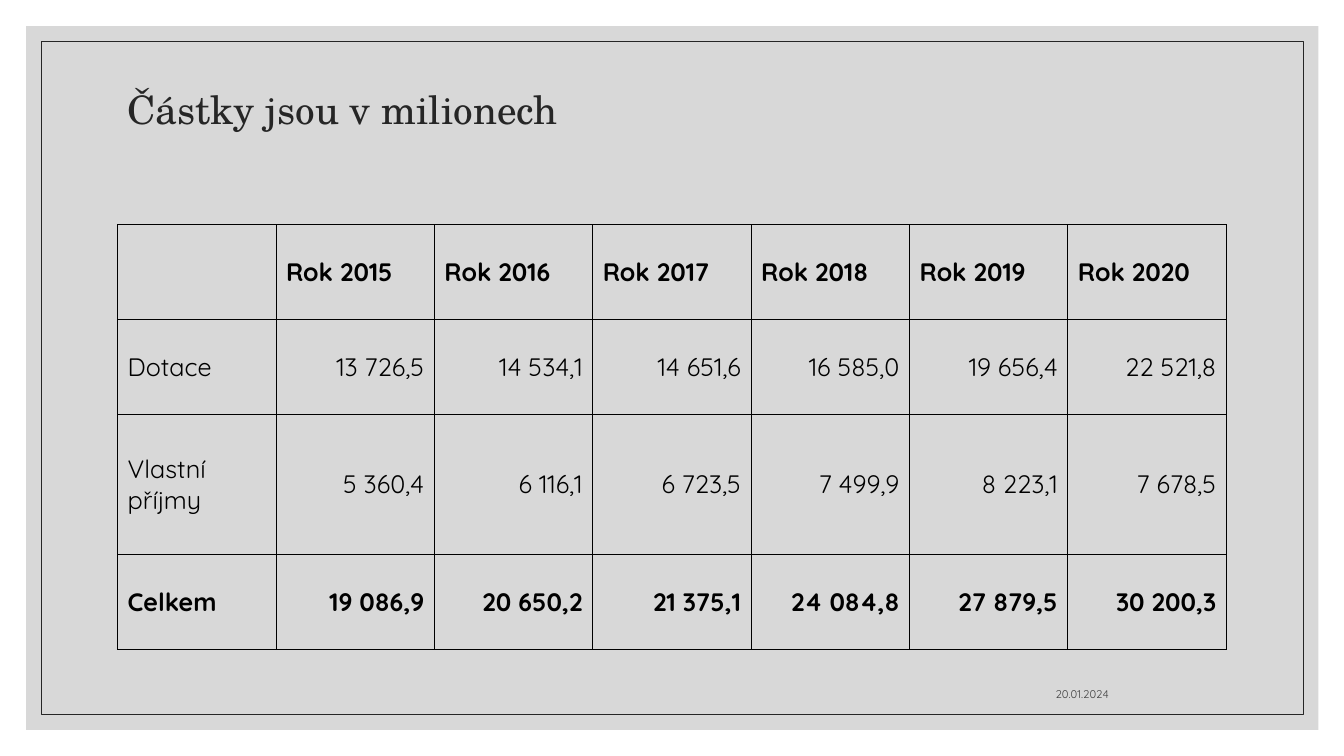
import pptx
import pptx.dml.color
import pptx.enum.shapes
import pptx.enum.text
import pptx.oxml
import pptx.oxml.ns
import pptx.util

Pt = pptx.util.Pt
RGBColor = pptx.dml.color.RGBColor
Align = pptx.enum.text.PP_ALIGN
Anchor = pptx.enum.text.MSO_ANCHOR

PANEL_GREY = RGBColor(0xBF, 0xBF, 0xBF)
DARK = RGBColor(0x26, 0x26, 0x26)
DATE_GREY = RGBColor(0x40, 0x40, 0x40)
BLACK = RGBColor(0, 0, 0)

HEADING_FONT = "TeX Gyre Schola"
BODY_FONT = "Quicksand"

ROWS = [
    ["", "Rok 2015", "Rok 2016", "Rok 2017", "Rok 2018", "Rok 2019", "Rok 2020"],
    ["Dotace", "13 726,5", "14 534,1", "14 651,6", "16 585,0", "19 656,4", "22 521,8"],
    ["Vlastní příjmy", "5 360,4", "6 116,1", "6 723,5", "7 499,9", "8 223,1", "7 678,5"],
    ["Celkem", "19 086,9", "20 650,2", "21 375,1", "24 084,8", "27 879,5", "30 200,3"],
]
ROW_HEIGHTS = [67.8, 67.8, 100.2, 67.8]
TABLE_LEFT, TABLE_TOP, TABLE_WIDTH = 84, 160.5, 792


def set_all(target, values):
    for name, value in values.items():
        setattr(target, name, value)


def write(frame, text, align, color, font):
    para = frame.paragraphs[0]
    para.alignment = align
    span = para.add_run()
    span.text = text
    set_all(span.font, font)
    span.font.color.rgb = color
    return para


def add_rectangle(page, left, top, width, height):
    box = page.shapes.add_shape(
        pptx.enum.shapes.MSO_SHAPE.RECTANGLE, Pt(left), Pt(top), Pt(width), Pt(height))
    box.shadow.inherit = False
    page.shapes.title._element.addprevious(box._element)
    return box


def add_background(page):
    panel = add_rectangle(page, 18.7, 18.7, 923, 502.6)
    panel.fill.solid()
    panel.fill.fore_color.rgb = PANEL_GREY
    panel.line.fill.background()
    color = panel._element.spPr.find(".//" + pptx.oxml.ns.qn("a:srgbClr"))
    color.append(pptx.oxml.parse_xml(
        f'<a:alpha {pptx.oxml.ns.nsdecls("a")} val="60000"/>'))

    border = add_rectangle(page, 29.5, 29.5, 901.4, 481)
    border.fill.background()
    border.line.color.rgb = DARK
    border.line.width = Pt(0.5)


def format_title(page, text):
    title = page.shapes.title
    set_all(title, {"left": Pt(84), "top": Pt(47), "width": Pt(792), "height": Pt(66)})
    set_all(title.text_frame, {"vertical_anchor": Anchor.MIDDLE, "word_wrap": True})
    para = write(title.text_frame, text, Align.LEFT, DARK,
                 {"name": HEADING_FONT, "size": Pt(28)})
    para.line_spacing = 0.9


def add_cell_borders(cell):
    properties = cell._tc.get_or_add_tcPr()
    for position, side in enumerate(["lnL", "lnR", "lnT", "lnB"]):
        properties.insert(position, pptx.oxml.parse_xml(
            f'<a:{side} {pptx.oxml.ns.nsdecls("a")} w="{Pt(0.75)}">'
            f'<a:solidFill><a:srgbClr val="{BLACK}"/></a:solidFill></a:{side}>'))


def add_income_table(page):
    table = page.shapes.add_table(
        len(ROWS), len(ROWS[0]), Pt(TABLE_LEFT), Pt(TABLE_TOP),
        Pt(TABLE_WIDTH), Pt(sum(ROW_HEIGHTS))).table
    set_all(table, {"first_row": False, "horz_banding": False})
    for column in table.columns:
        column.width = Pt(TABLE_WIDTH / len(ROWS[0]))
    for row_index, values in enumerate(ROWS):
        table.rows[row_index].height = Pt(ROW_HEIGHTS[row_index])
        bold = row_index in (0, len(ROWS) - 1)
        for column_index, value in enumerate(values):
            cell = table.cell(row_index, column_index)
            set_all(cell, {"vertical_anchor": Anchor.MIDDLE,
                           "margin_left": Pt(7.2), "margin_right": Pt(7.2),
                           "margin_top": Pt(12), "margin_bottom": Pt(12)})
            cell.fill.background()
            add_cell_borders(cell)
            if value:
                align = Align.RIGHT if row_index and column_index else Align.LEFT
                write(cell.text_frame, value, align, BLACK,
                      {"name": BODY_FONT, "size": Pt(18), "bold": bold})


def add_date(page, text):
    box = page.shapes.add_textbox(Pt(571.7), Pt(475.2), Pt(227.5), Pt(28.8))
    set_all(box.text_frame, {"word_wrap": True, "vertical_anchor": Anchor.BOTTOM})
    write(box.text_frame, text, Align.RIGHT, DATE_GREY,
          {"name": BODY_FONT, "size": Pt(8)})


def main():
    deck = pptx.Presentation()
    set_all(deck, {"slide_width": Pt(960), "slide_height": Pt(540)})
    page = deck.slides.add_slide(deck.slide_layouts.get_by_name("Title Only"))
    add_background(page)
    format_title(page, "Částky jsou v milionech")
    add_income_table(page)
    add_date(page, "20.01.2024")
    deck.save("out.pptx")


if __name__ == "__main__":
    main()
